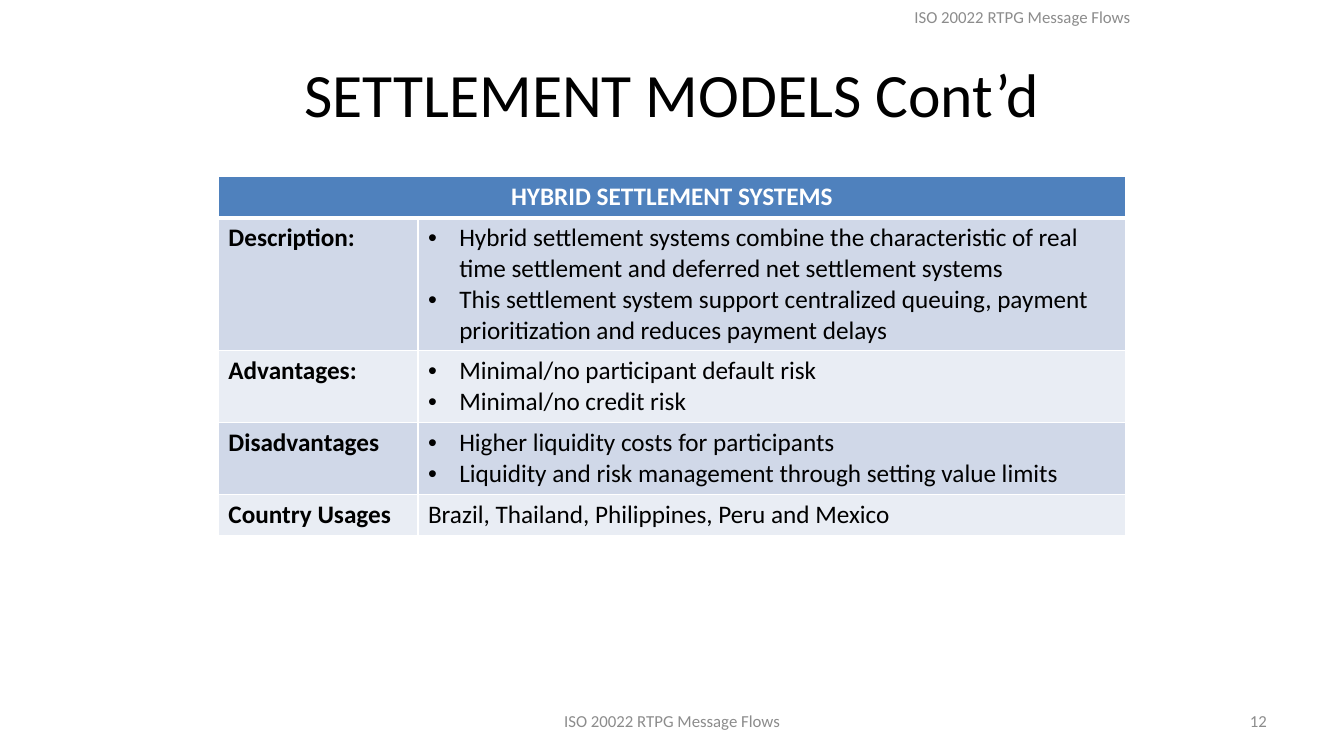
from dataclasses import dataclass

from lxml.etree import SubElement
from pptx import Presentation
from pptx.dml.color import RGBColor
from pptx.enum.text import MSO_VERTICAL_ANCHOR as Anchor, PP_PARAGRAPH_ALIGNMENT as Align
from pptx.oxml import parse_xml
from pptx.oxml.ns import nsdecls, qn
from pptx.util import Inches, Pt

COLOURS = {
    "black": "000000", "white": "FFFFFF", "grey": "8C8C8C",
    "header": "4F81BD", "dark band": "D0D8E8", "light band": "E9EDF4",
}
TITLE = {"size": Pt(44), "bold": False}
HEADING = {"size": Pt(18), "bold": True}
BODY = {"size": Pt(18), "bold": False}
SMALL = {"size": Pt(12), "bold": False}

# The slide is a grid of 40 columns and 30 rows
COLUMN = Inches(13.33) / 40
ROW = Inches(7.5) / 30
ROW_HEIGHT = int(1.64 * ROW)
BULLET_INDENT = Inches(0.31)


@dataclass
class Area:
    column: float
    row: float
    columns: float
    rows: float

    def lengths(self) -> tuple[int, ...]:
        return (int(self.column * COLUMN), int(self.row * ROW),
                int(self.columns * COLUMN), int(self.rows * ROW))


@dataclass
class Label:
    text: str
    area: Area
    align: Align


@dataclass
class Topic:
    name: str
    lines: list[str]
    bulleted: bool = True


LABELS = [
    Label("ISO 20022 RTPG Message Flows", Area(13.67, 27.8, 12.67, 1.6), Align.CENTER),
    Label("12", Area(28.67, 27.8, 9.33, 1.6), Align.RIGHT),
    Label("ISO 20022 RTPG Message Flows", Area(25.68, -0.12, 9.5, 1.6), Align.CENTER),
]
TOPICS = [
    Topic("Description:", [
        "Hybrid settlement systems combine the characteristic of real time settlement "
        "and deferred net settlement systems",
        "This settlement system support centralized queuing, payment prioritization "
        "and reduces payment delays"]),
    Topic("Advantages:", ["Minimal/no participant default risk", "Minimal/no credit risk"]),
    Topic("Disadvantages", ["Higher liquidity costs for participants",
                            "Liquidity and risk management through setting value limits"]),
    Topic("Country Usages", ["Brazil, Thailand, Philippines, Peru and Mexico"], bulleted=False),
]


def write(para, text: str, style: dict, colour: str, align: Align = Align.LEFT) -> None:
    span = para.add_run()
    span.text = text
    para.alignment = align
    for name, value in {"name": "Calibri", **style}.items():
        setattr(span.font, name, value)
    span.font.color.rgb = RGBColor.from_string(COLOURS[colour])


def add_bullet(para) -> None:
    properties = para._p.get_or_add_pPr()
    properties.set("marL", str(BULLET_INDENT))
    properties.set("indent", str(-BULLET_INDENT))
    SubElement(properties, qn("a:buFont")).set("typeface", "Arial")
    SubElement(properties, qn("a:buChar")).set("char", "•")


def fill_cell(cell, lines: list[str], style: dict, fill: str, colour: str = "black",
              align: Align = Align.LEFT, bulleted: bool = False, bottom: int = 1) -> None:
    cell.fill.solid()
    cell.fill.fore_color.rgb = RGBColor.from_string(COLOURS[fill])
    for index, line in enumerate(lines):
        frame = cell.text_frame
        para = frame.add_paragraph() if index else frame.paragraphs[0]
        write(para, line, style, colour, align)
        if bulleted:
            add_bullet(para)
    draw_borders(cell, bottom)


def draw_borders(cell, bottom: int) -> None:
    widths = {"lnL": 1, "lnR": 1, "lnT": 1, "lnB": bottom}
    for index, (side, width) in enumerate(widths.items()):
        cell._tc.get_or_add_tcPr().insert(index, parse_xml(
            f'<a:{side} {nsdecls("a")} w="{Pt(width)}"><a:solidFill>'
            f'<a:srgbClr val="{COLOURS["white"]}"/></a:solidFill></a:{side}>'))


def add_title(page) -> None:
    title = page.shapes.title
    title.left, title.top, title.width, title.height = Area(2, 1.2, 36, 5).lengths()
    title.text_frame.vertical_anchor = Anchor.MIDDLE
    write(title.text_frame.paragraphs[0], "SETTLEMENT MODELS Cont’d", TITLE, "black", Align.CENTER)


def add_label(page, label: Label) -> None:
    box = page.shapes.add_textbox(*label.area.lengths())
    box.text_frame.word_wrap = True
    box.text_frame.vertical_anchor = Anchor.MIDDLE
    write(box.text_frame.paragraphs[0], label.text, SMALL, "grey", label.align)


def add_settlement_table(page) -> None:
    area = Area(6.5, 7, 27, 14.04)
    holder = page.shapes.add_table(len(TOPICS) + 1, 2, *area.lengths())
    table = holder.table
    for column, share in zip(table.columns, (0.22, 0.78)):
        column.width = int(area.columns * COLUMN * share)
    for row in table.rows:
        row.height = ROW_HEIGHT
    holder.height = area.lengths()[3]

    # Header across both columns
    header = table.cell(0, 0)
    header.merge(table.cell(0, 1))
    fill_cell(header, ["HYBRID SETTLEMENT SYSTEMS"], HEADING, "header", "white",
              Align.CENTER, bottom=3)
    draw_borders(table.cell(0, 1), bottom=3)

    # Banded topic rows
    for index, topic in enumerate(TOPICS):
        band = "light band" if index % 2 else "dark band"
        fill_cell(table.cell(index + 1, 0), [topic.name], HEADING, band)
        fill_cell(table.cell(index + 1, 1), topic.lines, BODY, band, bulleted=topic.bulleted)


def main() -> None:
    deck = Presentation()
    deck.slide_width, deck.slide_height = Inches(13.33), Inches(7.5)
    page = deck.slides.add_slide(deck.slide_layouts[5])
    add_title(page)
    add_settlement_table(page)
    for label in LABELS:
        add_label(page, label)
    deck.save("out.pptx")


if __name__ == "__main__":
    main()
